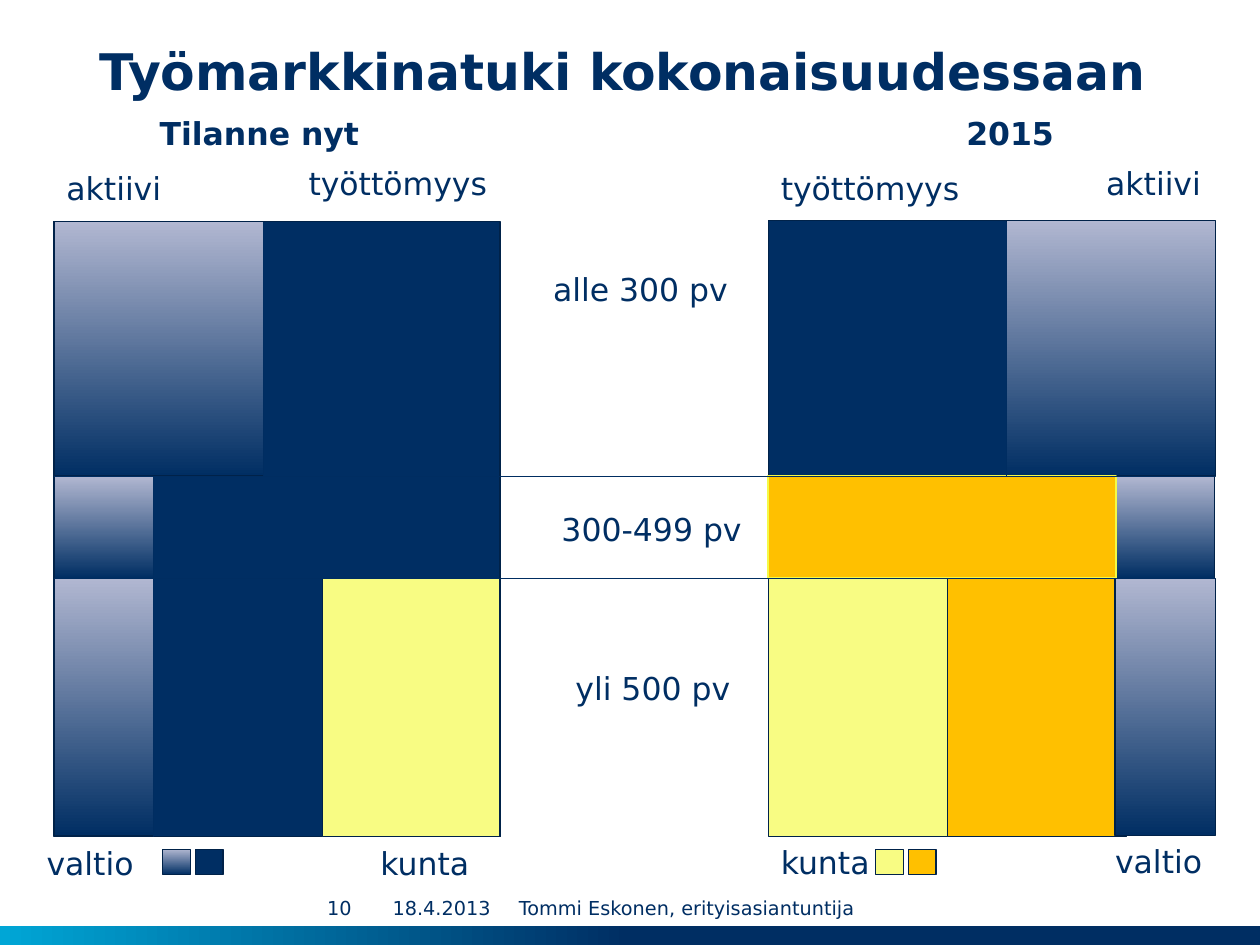
from pptx import Presentation
from pptx import util as u
from pptx.dml.color import RGBColor
from pptx.enum import shapes, text
from lxml import etree

NAVY, EDGE, RULE = "002E63", "002249", "002D61"
YELLOW, ORANGE, LILAC = "F8FC83", "FFC000", "B1B7D1"
FADE = (90, (0, NAVY), (1, LILAC))
FONT = "DejaVu Sans"
A = "http://schemas.openxmlformats.org/drawingml/2006/main"

prs = Presentation()
prs.slide_width, prs.slide_height = u.Cm(25.4), u.Cm(19.05)
s = prs.slides.add_slide(prs.slide_layouts[6])


def paint(color, value):
    color.rgb = RGBColor.from_string(value)


def add_text(words, x, y, w, h, size=18, bold=False, wrap=False, inset=(0.25, 0.13),
             anchor=text.MSO_ANCHOR.TOP, align=text.PP_ALIGN.LEFT):
    sp = s.shapes.add_textbox(u.Cm(x), u.Cm(y), u.Cm(w), u.Cm(h))
    tf = sp.text_frame
    tf.word_wrap = wrap
    tf.vertical_anchor = anchor
    tf.margin_left = tf.margin_right = u.Cm(inset[0])
    tf.margin_top = tf.margin_bottom = u.Cm(inset[1])
    p = tf.paragraphs[0]
    p.text = words
    p.alignment = align
    r = p.runs[0]
    r.font.name, r.font.size, r.font.bold = FONT, u.Pt(size), bold
    paint(r.font.color, NAVY)


left, right, lilac_w, key_w, key_h = 1.09, 15.49, 2.01, 0.56, 0.51
top, day300, day500, bottom = 4.47, 9.6, 11.66, 16.87
left_end, right_end = 10.08, 24.49
right_top, key_y = 4.44, 17.12

boxes = [
    (0, 18.67, 25.4, 19.07, (180, (0.5, NAVY), (1, "00A6D6")), None, 0),
    (left, top, left_end, bottom, NAVY, EDGE, 0.75),
    (right, right_top, right_end, bottom - 0.03, NAVY, EDGE, 0.75),
    (6.5, day500, left_end, bottom, YELLOW, EDGE, 0.75),
    (right, day500, 19.1, bottom, YELLOW, EDGE, 0.75),
    (left, top, 5.31, day300, FADE, EDGE, 0.75),
    (left, day300, left + lilac_w, day500, FADE, EDGE, 0.75),
    (left, day500, left + lilac_w, bottom - 0.03, FADE, EDGE, 0.75),
    (19.1, day500, 22.71, bottom, ORANGE, EDGE, 0.75),
    (right_end - lilac_w, day300, right_end, day500, FADE, EDGE, 0.75),
    (20.29, right_top, 24.5, day300, FADE, EDGE, 0.75),
    (right_end - lilac_w, day500, 24.5, bottom - 0.03, FADE, EDGE, 0.75),
    (right, day300, 22.5, day500, ORANGE, "F5FA45", 1),
]
for x, fill in ((3.28, FADE), (3.94, NAVY), (17.65, YELLOW), (18.31, ORANGE)):
    boxes.append((x, key_y, x + key_w, key_y + key_h, fill, EDGE, 0.75))

for x1, y1, x2, y2, fill, line, width in boxes:
    sp = s.shapes.add_shape(shapes.MSO_SHAPE.RECTANGLE, u.Cm(x1), u.Cm(y1), u.Cm(x2 - x1), u.Cm(y2 - y1))
    sp.shadow.inherit = False
    if isinstance(fill, tuple):
        sp.fill.gradient()
        sp.fill.gradient_angle = fill[0]
        for stop, (position, value) in zip(sp.fill.gradient_stops, fill[1:]):
            stop.position = position
            paint(stop.color, value)
    else:
        sp.fill.solid()
        paint(sp.fill.fore_color, fill)
    if line:
        paint(sp.line.color, line)
        sp.line.width = u.Pt(width)
    else:
        sp.line.fill.background()

for x1, y1, x2, y2 in [
    (5.31, top, 5.31, day300),
    (3.1, day300, 3.1, day500),
    (3.1, day500, 3.1, bottom),
    (20.29, top, 20.29, day300),
    (left, day300, 24.5, day300),
    (left, day500, 24.5, day500),
]:
    sp = s.shapes.add_connector(shapes.MSO_CONNECTOR.STRAIGHT, u.Cm(x1), u.Cm(y1), u.Cm(x2), u.Cm(y2))
    paint(sp.line.color, RULE)
    sp.line.width = u.Pt(0.75)
    etree.SubElement(sp._element.spPr, f"{{{A}}}effectLst")

add_text("Työmarkkinatuki kokonaisuudessaan", 2.01, 0.46, 21.62, 1.7, size=28.8, bold=True,
         wrap=True, inset=(0, 0.13), anchor=text.MSO_ANCHOR.BOTTOM)
add_text("Tilanne nyt", 2.97, 2.16, 5.05, 1.02, bold=True, wrap=True)
add_text("2015", 19.23, 2.16, 2.34, 1.02, bold=True)

for words, x, y, w in [
    ("aktiivi", 1.09, 3.28, 2.44),
    ("työttömyys", 5.97, 3.18, 4.14),
    ("työttömyys", 15.49, 3.28, 4.14),
    ("aktiivi", 22.05, 3.18, 2.44),
    ("alle 300 pv", 10.9, 5.31, 4.17),
    ("300-499 pv", 11.07, 10.16, 4.27),
    ("yli 500 pv", 11.35, 13.36, 3.71),
    ("valtio", 0.69, 16.89, 2.26),
    ("kunta", 7.42, 16.89, 2.34),
    ("kunta", 15.49, 16.87, 2.34),
    ("valtio", 22.23, 16.84, 2.26),
]:
    add_text(words, x, y, w, 1.02)

for words, x, w, align in [
    ("10", 6.3, 1.09, text.PP_ALIGN.CENTER),
    ("18.4.2013", 7.65, 2.51, text.PP_ALIGN.CENTER),
    ("Tommi Eskonen, erityisasiantuntija", 10.46, 8.61, text.PP_ALIGN.LEFT),
]:
    add_text(words, x, 17.93, w, 0.74, size=11, wrap=True, inset=(0, 0),
             anchor=text.MSO_ANCHOR.MIDDLE, align=align)

prs.save("out.pptx")
